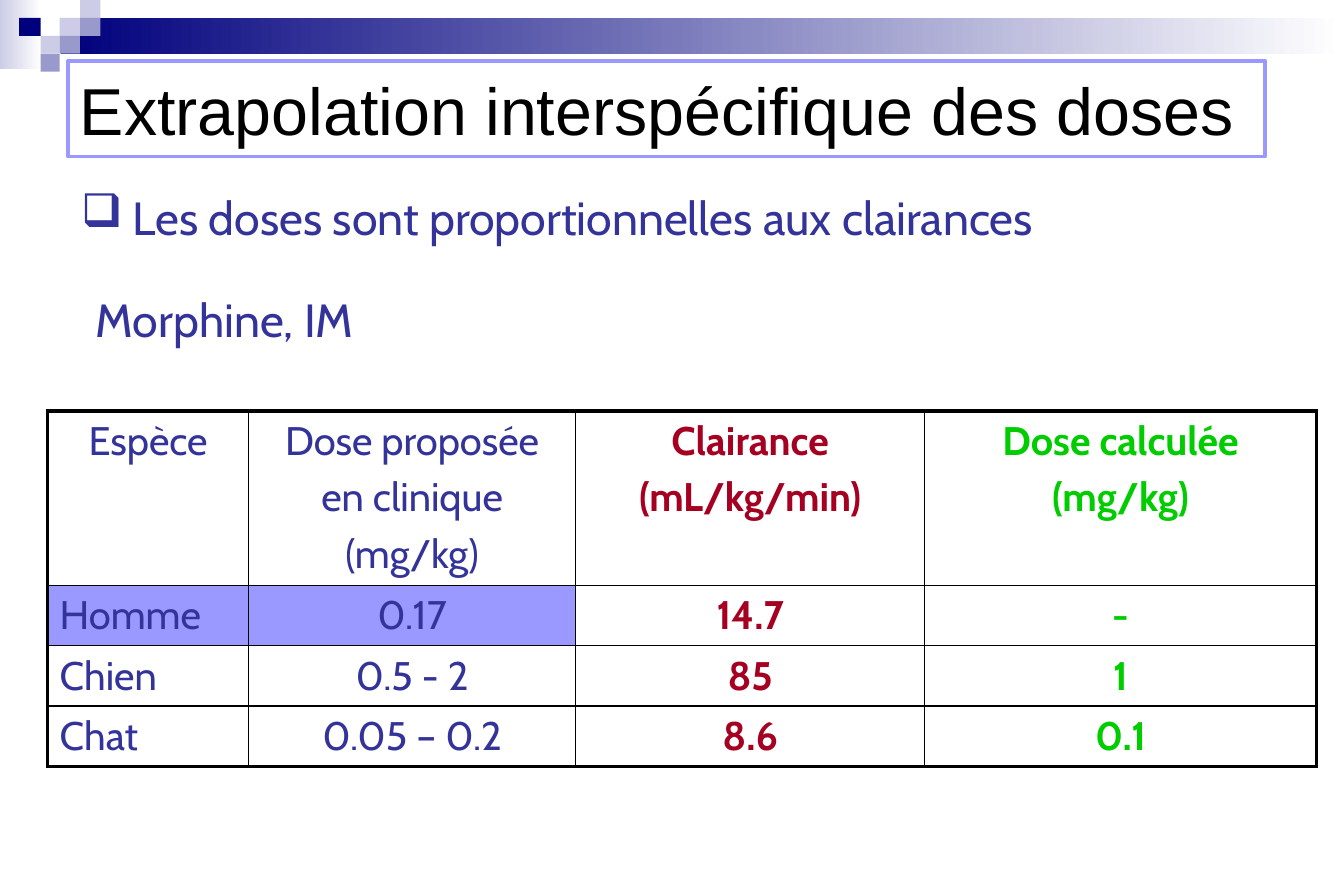
from pptx import Presentation
from pptx.dml.color import RGBColor
from pptx.enum.shapes import MSO_SHAPE
from pptx.enum.text import MSO_ANCHOR, PP_ALIGN
from pptx.oxml.ns import qn
from pptx.util import Inches, Pt
from lxml import etree

RECT = MSO_SHAPE.RECTANGLE
LEFT, MID = PP_ALIGN.LEFT, PP_ALIGN.CENTER

# Content
TITLE = "Extrapolation interspécifique des doses"
POINT = " Les doses sont proportionnelles aux clairances"
DRUG = "Morphine, IM"
ROWS = [
    (["Espèce"], ["Dose proposée", "en clinique", "(mg/kg)"],
     ["Clairance", "(mL/kg/min)"], ["Dose calculée", "(mg/kg)"]),
    (["Homme"], ["0.17"], ["14.7"], ["-"]),
    (["Chien"], ["0.5 - 2"], ["85"], ["1"]),
    (["Chat"], ["0.05 – 0.2"], ["8.6"], ["0.1"]),
]
WIDTHS = [1.68, 2.74, 2.92, 3.28]
HEIGHTS = [1.46, 0.5, 0.5, 0.5]

# Theme
THEME = {
    "navy": "00007D", "pale": "CCCCE6", "mauve": "9999CC", "white": "FFFFFF",
    "ink": "333399", "black": "000000", "red": "A50021", "green": "00CC00",
    "lilac": "9999FF",
    "head": "Arial", "body": "Cabin",
    "title": 40, "text": 28, "cell": 24, "gap": 4.8,
    "thick": 2.25, "thin": 1,
}
TONES = ["ink", "ink", "red", "green"]

# Corner squares: column, row, colour
EDGES = [0.16, 0.34, 0.5, 0.67, 0.84]
SIDE = 0.15
TILES = [(2, 1, "pale"), (3, 0, "pale"), (3, 1, "mauve"), (1, 2, "pale"),
         (0, 1, "navy"), (2, 2, "mauve"), (1, 3, "mauve")]
# Fading bars: place, start colour
BARS = [((0, 0, 0.35, 0.58), "pale"), ((0.51, 0.15, 10.74, 0.3), "navy")]


def tint(name):
    return RGBColor.from_string(THEME[name])


def add_box(slide, place):
    box = slide.shapes.add_shape(RECT, *map(Inches, place))
    box.shadow.inherit = False
    box.line.fill.background()
    return box


def add_run(para, text, size, color="ink", font="body", bold=False):
    run = para.add_run()
    run.text = text
    run.font.size = Pt(THEME[size])
    run.font.name = THEME[font]
    run.font.color.rgb = tint(color)
    run.font.bold = bold


def add_text(slide, place, wrap=False):
    box = slide.shapes.add_textbox(*map(Inches, place))
    box.text_frame.word_wrap = wrap
    return box, box.text_frame.paragraphs[0]


def add_edge(cell, side, width):
    props = cell._tc.get_or_add_tcPr()
    line = etree.SubElement(props, qn("a:ln" + side), w=str(Pt(THEME[width])))
    fill = etree.SubElement(line, qn("a:solidFill"))
    etree.SubElement(fill, qn("a:srgbClr"), val=THEME["black"])


deck = Presentation()
deck.slide_width, deck.slide_height = Inches(11.25), Inches(7.5)
slide = deck.slides.add_slide(deck.slide_layouts[6])

# Top band
for place, start in BARS:
    fill = add_box(slide, place).fill
    fill.gradient()
    fill.gradient_angle = 0
    for stop, name in zip(fill.gradient_stops, (start, "white")):
        stop.color.rgb = tint(name)
for col, row, name in TILES:
    x, right = EDGES[col:col + 2]
    fill = add_box(slide, (x, row * SIDE, right - x, SIDE)).fill
    fill.solid()
    fill.fore_color.rgb = tint(name)

# Dose table
frame = slide.shapes.add_table(
    len(ROWS), len(WIDTHS), Inches(0.4), Inches(3.44),
    Inches(sum(WIDTHS)), Inches(sum(HEIGHTS)))
table = frame.table
table.first_row = table.horz_banding = False
for col, width in zip(table.columns, WIDTHS):
    col.width = Inches(width)
for row, height in zip(table.rows, HEIGHTS):
    row.height = Inches(height)
last_row, last_col = len(ROWS) - 1, len(WIDTHS) - 1
for r, row in enumerate(ROWS):
    for c, lines in enumerate(row):
        cell = table.cell(r, c)
        outer = {"L": c == 0, "R": c == last_col,
                 "T": r == 0, "B": r == last_row}
        for side, edge in outer.items():
            add_edge(cell, side, "thick" if edge else "thin")
        if r == 1 and c < 2:
            cell.fill.solid()
            cell.fill.fore_color.rgb = tint("lilac")
        else:
            cell.fill.background()
        for n, text in enumerate(lines):
            frame = cell.text_frame
            para = frame.add_paragraph() if n else frame.paragraphs[0]
            para.alignment = LEFT if r and c == 0 else MID
            para.space_before = Pt(THEME["gap"])
            add_run(para, text, "cell", TONES[c], bold=c > 1)

# Drug name
box, para = add_text(slide, (0.64, 2.39, 2.48, 0.57))
para.alignment = MID
add_run(para, DRUG, "text")

# Key point
box, para = add_text(slide, (0.58, 1.53, 8.62, 0.57))
etree.SubElement(para._p.get_or_add_pPr(), qn("a:buChar"), char="❑")
add_run(para, POINT, "text")

# Title
box, para = add_text(slide, (0.57, 0.51, 10.02, 0.8), wrap=True)
box.text_frame.vertical_anchor = MSO_ANCHOR.MIDDLE
box.line.color.rgb = tint("lilac")
box.line.width = Pt(THEME["thick"])
add_run(para, TITLE, "title", "black", "head")

deck.save("out.pptx")
